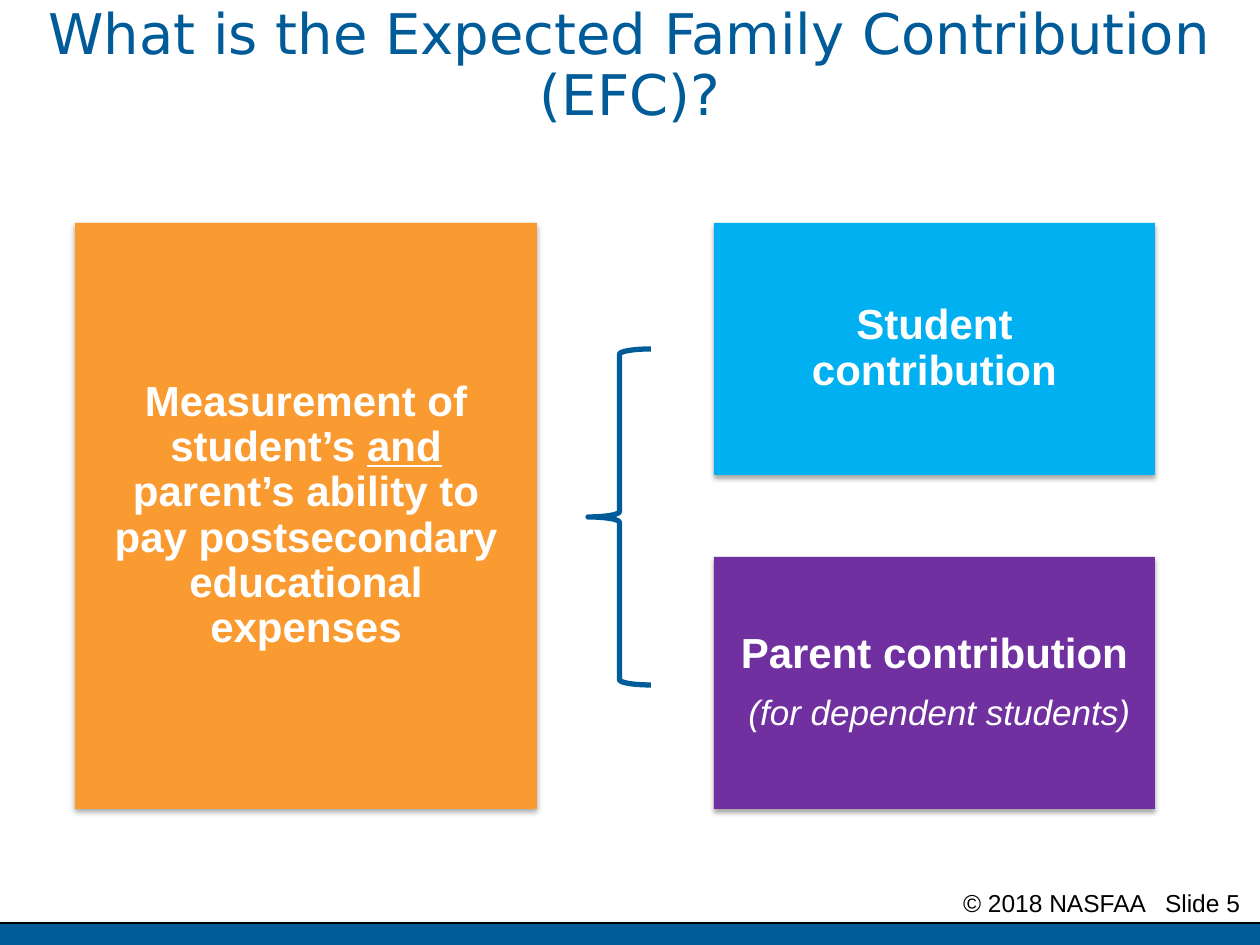
from lxml.etree import SubElement
from pptx import Presentation
from pptx.dml.color import RGBColor
from pptx.enum.shapes import MSO_CONNECTOR, MSO_SHAPE
from pptx.enum.text import MSO_ANCHOR, PP_ALIGN
from pptx.oxml.ns import qn
from pptx.util import Emu, Pt

COLORS = {
    "navy": "005B99",
    "orange": "FA9B32",
    "sky": "00B0F0",
    "purple": "7030A0",
    "white": "FFFFFF",
    "black": "000000",
}
BOLD = {"name": "Arial", "size": Pt(24), "bold": True}
UNDERLINED = {**BOLD, "underline": True}
NOTE = {"name": "Arial", "size": Pt(20), "italic": True}
FOOTER = {"name": "Arial", "size": Pt(14)}
TITLE = {"name": "DejaVu Sans", "size": Pt(32)}


def px(value):
    return Emu(round(value * 914400 / 126))


def rgb(color):
    return RGBColor.from_string(COLORS[color])


def set_values(target, values):
    for name, value in values.items():
        setattr(target, name, value)


class SlideBuilder:
    """Draws styled elements, placed in px, on the current slide."""

    def __init__(self, presentation):
        self.slide = presentation.slides.add_slide(presentation.slide_layouts[6])

    def shadow(self, shape, opacity=0, distance=0):
        properties = shape._element.spPr
        for effects in properties.findall(qn("a:effectLst")):
            properties.remove(effects)
        effects = SubElement(properties, qn("a:effectLst"))
        if opacity:
            outer = SubElement(effects, qn("a:outerShdw"), blurRad=str(Pt(3.1)),
                               dist=str(Pt(distance)), dir="5400000", rotWithShape="0")
            color = SubElement(outer, qn("a:srgbClr"), val=COLORS["black"])
            SubElement(color, qn("a:alpha"), val=str(opacity * 1000))

    def add_runs(self, paragraph, runs, color, layout):
        set_values(paragraph, layout)
        for text, style in runs:
            run = paragraph.add_run()
            run.text = text
            set_values(run.font, style)
            run.font.color.rgb = rgb(color)

    def text(self, bounds, runs, color, layout, frame_values, tab=None):
        shape = self.slide.shapes.add_textbox(*map(px, bounds))
        frame = shape.text_frame
        set_values(frame, {"word_wrap": True, **frame_values})
        paragraph = frame.paragraphs[0]
        if tab:
            tabs = SubElement(paragraph._p.get_or_add_pPr(), qn("a:tabLst"))
            SubElement(tabs, qn("a:tab"), pos=str(px(tab)), algn="l")
        self.add_runs(paragraph, runs, color, layout)

    def rectangle(self, bounds, color):
        shape = self.slide.shapes.add_shape(MSO_SHAPE.RECTANGLE, *map(px, bounds))
        shape.fill.solid()
        shape.fill.fore_color.rgb = rgb(color)
        shape.line.fill.background()
        self.shadow(shape)
        return shape

    def box(self, bounds, color, paragraphs):
        shape = self.rectangle(bounds, color)
        self.shadow(shape, 35, 1.8)
        frame = shape.text_frame
        margins = {f"margin_{side}": px(19) for side in ("left", "top", "right", "bottom")}
        set_values(frame, {"word_wrap": True, "vertical_anchor": MSO_ANCHOR.MIDDLE, **margins})
        layout = {"alignment": PP_ALIGN.CENTER, "line_spacing": 0.9, "space_after": Pt(10)}
        for index, (runs, indent) in enumerate(paragraphs):
            paragraph = frame.add_paragraph() if index else frame.paragraphs[0]
            paragraph._p.get_or_add_pPr().set("marL", str(px(indent)))
            self.add_runs(paragraph, runs, "white", layout)

    def brace(self, bounds, color):
        shape = self.slide.shapes.add_shape(MSO_SHAPE.LEFT_BRACE, *map(px, bounds))
        shape.fill.background()
        shape.line.color.rgb = rgb(color)
        shape.line.width = Pt(3)
        self.shadow(shape)

    def line(self, start, end, color):
        connector = self.slide.shapes.add_connector(
            MSO_CONNECTOR.STRAIGHT, *map(px, (*start, *end)))
        connector.line.color.rgb = rgb(color)
        connector.line.width = Pt(2)
        self.shadow(connector, 38, 1.6)


def main():
    width, height, bar_top = 1260, 945, 924
    presentation = Presentation()
    set_values(presentation, {"slide_width": px(width), "slide_height": px(height)})
    builder = SlideBuilder(presentation)

    builder.line((0, bar_top), (width, bar_top), "black")
    builder.text((788, 882, 472, 32), [("© 2018 NASFAA\tSlide 5", FOOTER)], "black",
                 {"alignment": PP_ALIGN.LEFT},
                 {"margin_left": px(175), "margin_right": 0}, tab=202)
    builder.rectangle((0, bar_top, width, height - bar_top), "navy")

    top, box_height, gap = 223, 252, 82
    left, box_width = 714, 441
    measurement = [("Measurement of student’s ", BOLD), ("and", UNDERLINED),
                   (" parent’s ability to pay postsecondary educational expenses", BOLD)]
    builder.box((75, top, 462, 2 * box_height + gap), "orange", [(measurement, 0)])
    contributions = [
        ("sky", [([("Student contribution", BOLD)], 0)]),
        ("purple", [([("Parent contribution", BOLD)], 0),
                    ([("(for dependent students)", NOTE)], 10)]),
    ]
    for row, (color, paragraphs) in enumerate(contributions):
        builder.box((left, top + row * (box_height + gap), box_width, box_height),
                    color, paragraphs)
    builder.brace((588, 349, 63, 336), "navy")

    builder.text((21, 0, 1218, 158),
                 [("What is the Expected Family Contribution (EFC)?", TITLE)], "navy",
                 {"alignment": PP_ALIGN.CENTER, "line_spacing": 0.9}, {})
    presentation.save("out.pptx")


if __name__ == "__main__":
    main()
